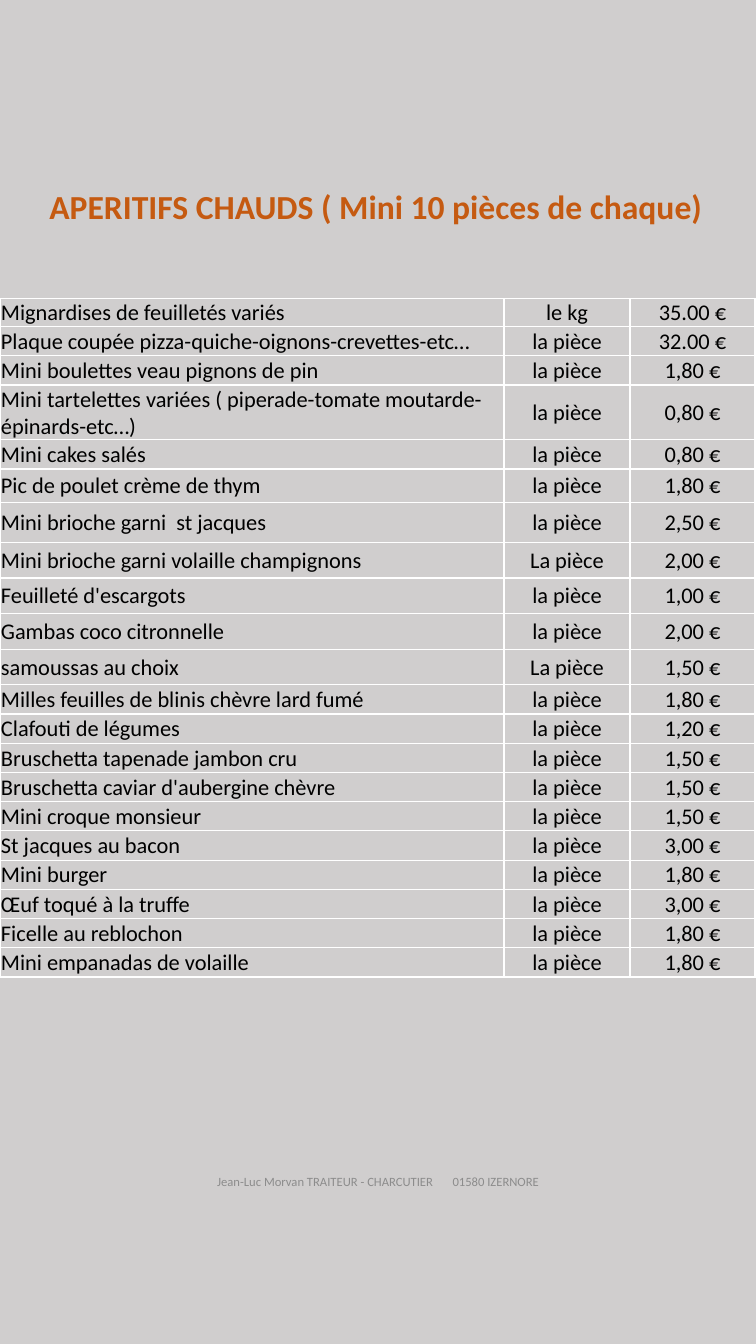
from lxml.etree import SubElement
from pptx import Presentation
from pptx.dml.color import RGBColor
from pptx.enum.text import MSO_ANCHOR as Anchor, MSO_AUTO_SIZE as AutoSize, PP_ALIGN as Align
from pptx.oxml.ns import qn
from pptx.util import Inches, Pt

GREY = RGBColor(0xD0, 0xCE, 0xCE)
ORANGE = RGBColor(0xC5, 0x5A, 0x11)
FOOTER_GREY = RGBColor(0x8C, 0x8C, 0x8C)
BLACK = RGBColor(0, 0, 0)
WHITE = RGBColor(0xFF, 0xFF, 0xFF)
FONT = "Calibri"

COLUMN_WIDTHS = (5, 1.25, 1.24)
COLUMN_ALIGNS = (Align.LEFT, Align.CENTER, Align.CENTER)
ROW_HEIGHT = 0.29
SPECIAL_HEIGHTS = {0: 0.28, 3: 0.5, 5: 0.33, 6: 0.4, 7: 0.35, 8: 0.35, 9: 0.36, 10: 0.35}
APERITIFS = (
    ("Mignardises de feuilletés variés", "le kg", "35.00 €"),
    ("Plaque coupée pizza-quiche-oignons-crevettes-etc…", "la pièce", "32.00 €"),
    ("Mini boulettes veau pignons de pin", "la pièce", "1,80 €"),
    ("Mini tartelettes variées ( piperade-tomate moutarde-épinards-etc…)", "la pièce", "0,80 €"),
    ("Mini cakes salés", "la pièce", "0,80 €"),
    ("Pic de poulet crème de thym", "la pièce", "1,80 €"),
    ("Mini brioche garni  st jacques", "la pièce", "2,50 €"),
    ("Mini brioche garni volaille champignons", "La pièce", "2,00 €"),
    ("Feuilleté d'escargots", "la pièce", "1,00 €"),
    ("Gambas coco citronnelle", "la pièce", "2,00 €"),
    ("samoussas au choix", "La pièce", "1,50 €"),
    ("Milles feuilles de blinis chèvre lard fumé", "la pièce", "1,80 €"),
    ("Clafouti de légumes", "la pièce", "1,20 €"),
    ("Bruschetta tapenade jambon cru", "la pièce", "1,50 €"),
    ("Bruschetta caviar d'aubergine chèvre", "la pièce", "1,50 €"),
    ("Mini croque monsieur", "la pièce", "1,50 €"),
    ("St jacques au bacon", "la pièce", "3,00 €"),
    ("Mini burger", "la pièce", "1,80 €"),
    ("Œuf toqué à la truffe", "la pièce", "3,00 €"),
    ("Ficelle au reblochon", "la pièce", "1,80 €"),
    ("Mini empanadas de volaille", "la pièce", "1,80 €"),
)


def add_run(paragraph, text, size, color, bold=False):
    run = paragraph.add_run()
    run.text = text
    run.font.name = FONT
    run.font.size = Pt(size)
    run.font.bold = bold
    run.font.color.rgb = color
    return run


def add_borders(cell):
    properties = cell._tc.get_or_add_tcPr()
    for side in ("a:lnL", "a:lnR", "a:lnT", "a:lnB"):
        border = SubElement(properties, qn(side), w=str(Pt(1)))
        fill = SubElement(border, qn("a:solidFill"))
        SubElement(fill, qn("a:srgbClr"), val=str(WHITE))


def place_title(slide, left, top, width, height):
    title = slide.shapes.title
    title.left, title.top = Inches(left), Inches(top)
    title.width, title.height = Inches(width), Inches(height)
    frame = title.text_frame
    frame.word_wrap = False
    frame.auto_size = AutoSize.SHAPE_TO_FIT_TEXT
    frame.vertical_anchor = Anchor.TOP
    heading = frame.paragraphs[0]
    heading.alignment = Align.LEFT
    add_run(heading, "APERITIFS CHAUDS ( Mini 10 pièces de chaque)", 24, ORANGE, True)


def fill_cell(cell, text, align):
    cell.margin_left = cell.margin_top = cell.margin_right = Inches(0.01)
    cell.margin_bottom = 0
    cell.vertical_anchor = Anchor.MIDDLE
    add_borders(cell)
    cell.fill.solid()
    cell.fill.fore_color.rgb = GREY
    paragraph = cell.text_frame.paragraphs[0]
    paragraph.alignment = align
    add_run(paragraph, text, 16, BLACK)


def add_price_list(slide, left, top):
    heights = [SPECIAL_HEIGHTS.get(i, ROW_HEIGHT) for i in range(len(APERITIFS))]
    prices = slide.shapes.add_table(
        len(APERITIFS), len(COLUMN_WIDTHS), Inches(left), Inches(top),
        Inches(sum(COLUMN_WIDTHS)), Inches(sum(heights))).table
    prices.first_row = prices.horz_banding = False
    for column, width in zip(prices.columns, COLUMN_WIDTHS):
        column.width = Inches(width)
    for row, height, aperitif in zip(prices.rows, heights, APERITIFS):
        row.height = Inches(height)
        for cell, text, align in zip(row.cells, aperitif, COLUMN_ALIGNS):
            fill_cell(cell, text, align)


def add_footer(slide, left, top, width, height):
    footer = slide.shapes.add_textbox(Inches(left), Inches(top), Inches(width), Inches(height))
    frame = footer.text_frame
    frame.word_wrap = True
    frame.vertical_anchor = Anchor.MIDDLE
    address = frame.paragraphs[0]
    address.alignment = Align.CENTER
    add_run(address, "Jean-Luc Morvan TRAITEUR - CHARCUTIER", 9, FOOTER_GREY)
    gap = add_run(address, " ", 9, FOOTER_GREY)
    gap._r.get_or_add_rPr().set("spc", "1200")
    add_run(address, "01580 IZERNORE", 9, FOOTER_GREY)


def build_menu(deck):
    slide = deck.slides.add_slide(deck.slide_layouts[5])
    slide.background.fill.solid()
    slide.background.fill.fore_color.rgb = GREY
    add_footer(slide, 2.01, 11.36, 3.48, 0.71)
    place_title(slide, 0.39, 1.79, 6.74, 0.5)
    add_price_list(slide, 0, 2.96)


def main():
    deck = Presentation()
    deck.slide_width, deck.slide_height = Inches(7.5), Inches(13.33)
    build_menu(deck)
    deck.save("out.pptx")


if __name__ == "__main__":
    main()
